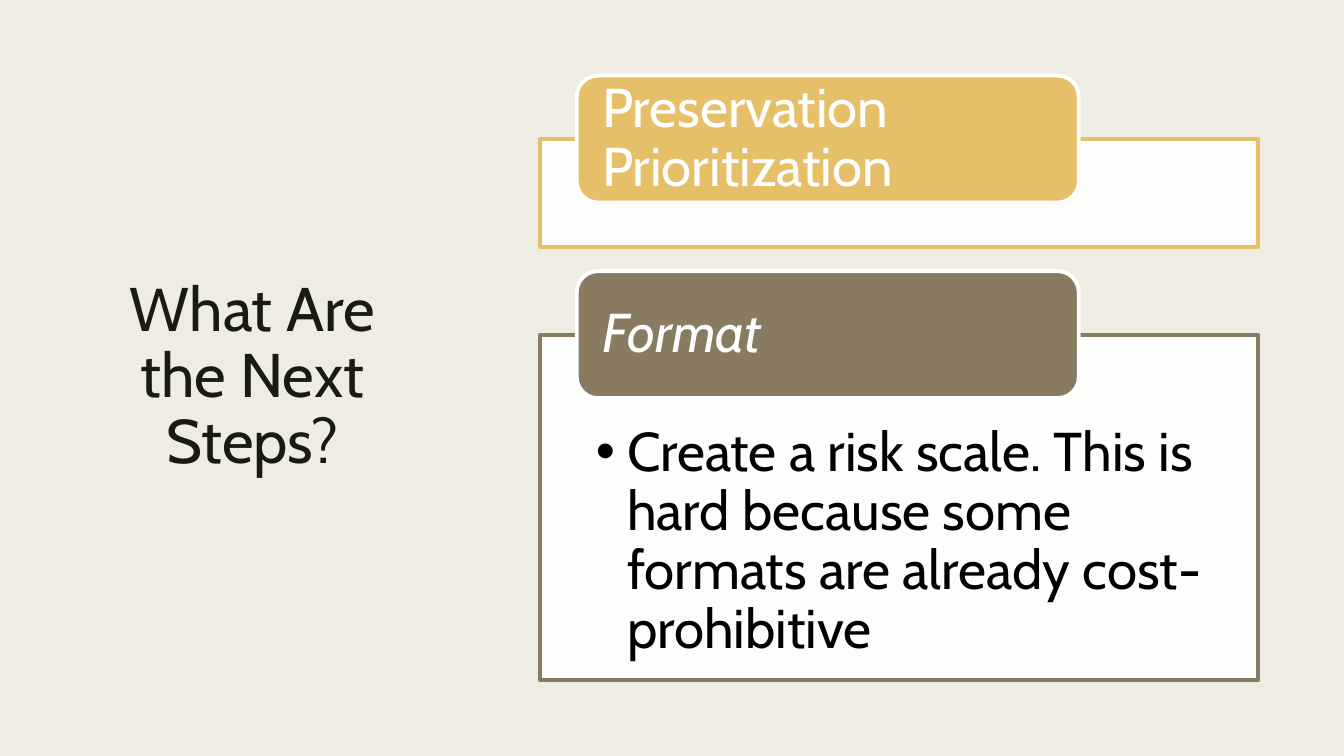
from lxml import etree
from pptx import Presentation
from pptx.dml.color import RGBColor
from pptx.enum.shapes import MSO_SHAPE as Shape
from pptx.enum.text import MSO_ANCHOR as Anchor, MSO_AUTO_SIZE as AutoSize, PP_ALIGN as Align
from pptx.oxml.ns import qn
from pptx.util import Inches, Pt

FONT = "Cabin"
COLORS = {"paper": "EFEDE3", "ink": "191B0E", "white": "FFFFFF",
          "black": "000000", "gold": "E6C069", "brown": "897B61"}
LABEL_W, LABEL_H = 4.98, 1.26
LABEL_INDENT, LABEL_RISE = 0.36, 0.63  # label position relative to its panel


def rgb(name):
    return RGBColor.from_string(COLORS[name])


def write(frame, text, size, color, align, spacing, insets, anchor, italic=None):
    frame.word_wrap = True
    frame.auto_size = AutoSize.NONE
    frame.vertical_anchor = anchor
    (frame.margin_left, frame.margin_top,
     frame.margin_right, frame.margin_bottom) = map(Inches, insets)
    paragraph = frame.paragraphs[0]
    paragraph.alignment = align
    paragraph.line_spacing = spacing
    run = paragraph.add_run()
    run.text = text
    run.font.name = FONT
    run.font.size = Pt(size)
    run.font.italic = italic
    run.font.color.rgb = rgb(color)
    return paragraph


def add_box(slide, kind, box, fill, line):
    shape = slide.shapes.add_shape(kind, *map(Inches, box))
    shape.shadow.inherit = False
    shape.fill.solid()
    shape.fill.fore_color.rgb = rgb(fill)
    shape.line.color.rgb = rgb(line)
    shape.line.width = Pt(2.75)
    return shape


def set_opacity(shape, percent):
    color = shape.fill._xPr.find(qn("a:solidFill"))[0]
    etree.SubElement(color, qn("a:alpha"), val=str(percent * 1000))


def add_bullet(paragraph, indent):
    props = paragraph._p.get_or_add_pPr()
    props.set("marL", str(Inches(indent)))
    props.set("indent", str(-Inches(indent)))
    etree.SubElement(props, qn("a:buFont"), typeface="Arial")
    etree.SubElement(props, qn("a:buChar"), char="•")


def place_title(slide, box, text):
    title = slide.shapes.title
    title.left, title.top, title.width, title.height = map(Inches, box)
    write(title.text_frame, text, 44, "ink", Align.CENTER, 0.89,
          (0.1, 0.05, 0.1, 0.05), Anchor.MIDDLE)


def add_section(slide, box, color, label, italic=None, bullet=None):
    left, top = box[:2]
    # Outlined panel with its bullet
    panel = add_box(slide, Shape.RECTANGLE, box, "white", color)
    set_opacity(panel, 90)
    if bullet:
        item = write(panel.text_frame, bullet, 39, "black", Align.LEFT, 0.9,
                     (0.55, 0.89, 0.55, 0.3), Anchor.TOP)
        add_bullet(item, 0.31)
    # Rounded label overlapping the panel's top edge
    tab = add_box(slide, Shape.ROUNDED_RECTANGLE,
                  (left + LABEL_INDENT, top - LABEL_RISE, LABEL_W, LABEL_H),
                  color, "white")
    write(tab.text_frame, label, 39, "white", Align.LEFT, 0.9,
          (0.19, 0, 0.19, 0), Anchor.MIDDLE, italic)


def main():
    deck = Presentation()
    deck.slide_width, deck.slide_height = Inches(13.33), Inches(7.5)
    slide = deck.slides.add_slide(deck.slide_layouts[5])
    slide.background.fill.solid()
    slide.background.fill.fore_color.rgb = rgb("paper")

    place_title(slide, (0.7, 0.7, 3.61, 6.1), "What Are the Next Steps?")
    add_section(slide, (5.36, 1.38, 7.12, 1.07), "gold", "Preservation Prioritization")
    add_section(slide, (5.36, 3.32, 7.12, 3.43), "brown", "Format", italic=True,
                bullet="Create a risk scale. This is hard because some formats "
                       "are already cost-prohibitive")
    deck.save("out.pptx")


if __name__ == "__main__":
    main()
